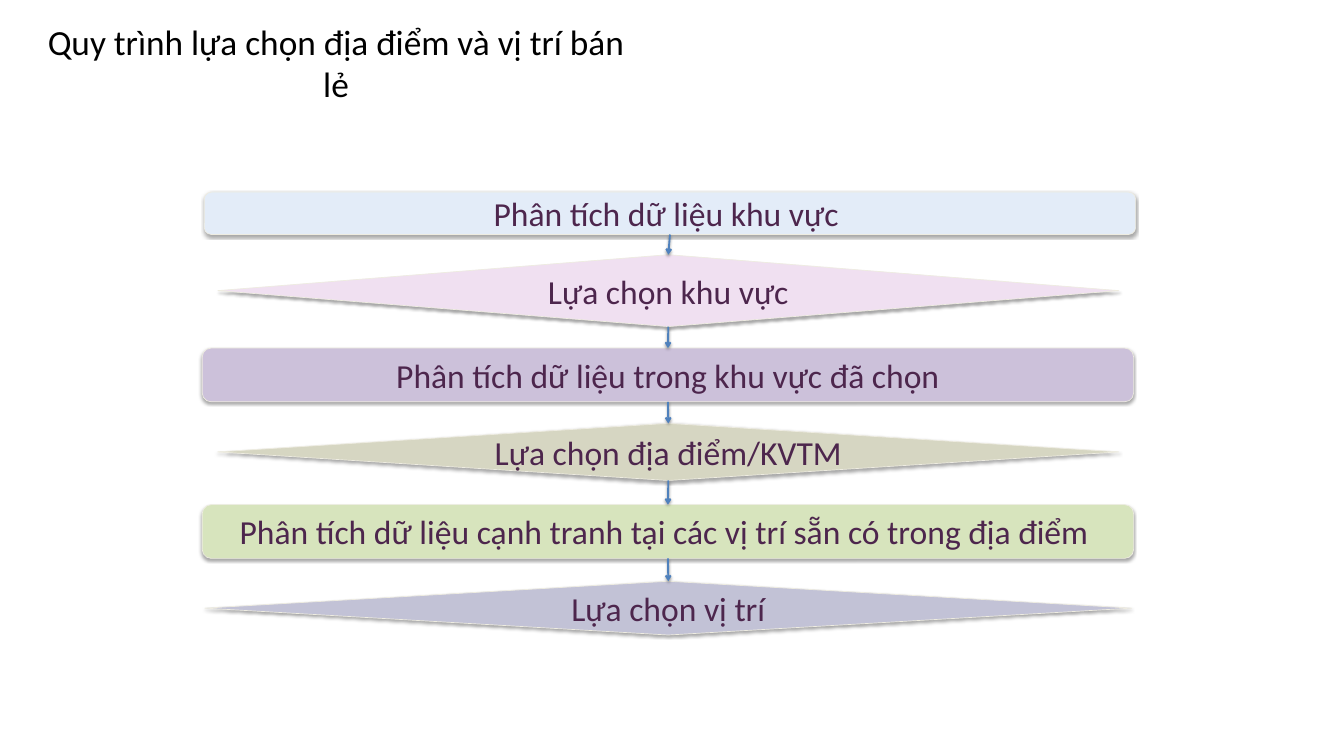
import pptx
import pptx.util
import pptx.dml.color
import pptx.enum.shapes
import pptx.enum.text
import pptx.oxml
import pptx.oxml.ns

Inches, Pt = pptx.util.Inches, pptx.util.Pt
SHAPE = pptx.enum.shapes.MSO_SHAPE
BOTTOM_SITE, TOP_SITE = 2, 0

COLORS = {
    "title": "000000", "label": "4D264D", "border": "EEECE1", "arrow": "4F81BD",
    "shadow": "000000", "area data": "E3ECF8", "area choice": "F0E0F1",
    "inner data": "CCC1DA", "site choice": "D6D6C2",
    "rival data": "D7E4BD", "spot choice": "C2C2D6",
}

TITLE = "Quy trình lựa chọn địa điểm và vị trí bán lẻ"

# kind of step, colour, label, box (left, top, width, height in inches)
STEPS = [
    ("data", "area data", "Phân tích dữ liệu khu vực ", (3.04, 2.86, 13.86, 0.63)),
    ("choice", "area choice", "Lựa chọn khu vực", (3.24, 3.79, 13.41, 1.07)),
    ("data", "inner data", "Phân tích dữ liệu trong khu vực đã chọn",
     (3.01, 5.18, 13.86, 0.8)),
    ("choice", "site choice", "Lựa chọn địa điểm/KVTM", (3.24, 6.3, 13.41, 0.85)),
    ("data", "rival data",
     "Phân tích dữ liệu cạnh tranh tại các vị trí sẵn có trong địa điểm ",
     (3.01, 7.51, 13.86, 0.8)),
    ("choice", "spot choice", "Lựa chọn vị trí", (3.05, 8.65, 13.79, 0.8)),
]
OUTLINES = {"data": SHAPE.ROUNDED_RECTANGLE, "choice": SHAPE.DIAMOND}


def color(name):
    return pptx.dml.color.RGBColor.from_string(COLORS[name])


def set_all(target, values):
    for name, value in values.items():
        setattr(target, name, value)


def write(shape, text, size, color_name):
    """Put one centred line of text in a shape."""
    set_all(shape.text_frame, {"vertical_anchor": pptx.enum.text.MSO_ANCHOR.MIDDLE})
    para = shape.text_frame.paragraphs[0]
    para.alignment = pptx.enum.text.PP_ALIGN.CENTER
    span = para.add_run()
    span.text = text
    set_all(span.font, {"name": "Calibri", "size": Pt(size)})
    span.font.color.rgb = color(color_name)


def add_shadow(shape, distance, opacity):
    """Give a shape or connector a soft shadow straight below it."""
    properties = shape.element.spPr
    for old in properties.findall(pptx.oxml.ns.qn("a:effectLst")):
        properties.remove(old)
    properties.append(pptx.oxml.parse_xml(
        f'<a:effectLst {pptx.oxml.ns.nsdecls("a")}>'
        f'<a:outerShdw blurRad="{Pt(3.1)}" dist="{Pt(distance)}" dir="5400000" '
        f'rotWithShape="0"><a:srgbClr val="{COLORS["shadow"]}">'
        f'<a:alpha val="{opacity * 1000}"/></a:srgbClr></a:outerShdw></a:effectLst>'))


def add_title(page, box):
    title = page.shapes.title
    set_all(title, dict(zip(("left", "top", "width", "height"), map(Inches, box))))
    title.text_frame.word_wrap = True
    write(title, TITLE, 37.8, "title")


def add_step(page, kind, fill, label, box):
    step = page.shapes.add_shape(OUTLINES[kind], *map(Inches, box))
    step.fill.solid()
    step.fill.fore_color.rgb = color(fill)
    step.line.width = Pt(0.75)
    step.line.color.rgb = color("border")
    add_shadow(step, 1.8, 35)
    set_all(step.text_frame, {"word_wrap": False, "margin_top": 0, "margin_bottom": 0})
    write(step, label, 36, "label")
    return step


def add_arrow(page, upper, lower):
    """Join the bottom of one step to the top of the next."""
    arrow = page.shapes.add_connector(
        pptx.enum.shapes.MSO_CONNECTOR.STRAIGHT, 0, 0, 0, 0)
    arrow.begin_connect(upper, BOTTOM_SITE)
    arrow.end_connect(lower, TOP_SITE)
    arrow.line.width = Pt(2)
    arrow.line.color.rgb = color("arrow")
    arrow.line._get_or_add_ln().append(pptx.oxml.parse_xml(
        f'<a:tailEnd {pptx.oxml.ns.nsdecls("a")} type="arrow"/>'))
    add_shadow(arrow, 1.6, 38)


def add_flow(page):
    steps = [add_step(page, *step) for step in STEPS]
    for upper, lower in zip(steps, steps[1:]):
        add_arrow(page, upper, lower)


def main():
    deck = pptx.Presentation()
    set_all(deck, {"slide_width": Inches(20), "slide_height": Inches(11.25)})
    page = deck.slides.add_slide(deck.slide_layouts.get_by_name("Title Only"))
    add_title(page, (0.5, 0.3, 9, 1.25))
    add_flow(page)
    deck.save("out.pptx")


if __name__ == "__main__":
    main()
